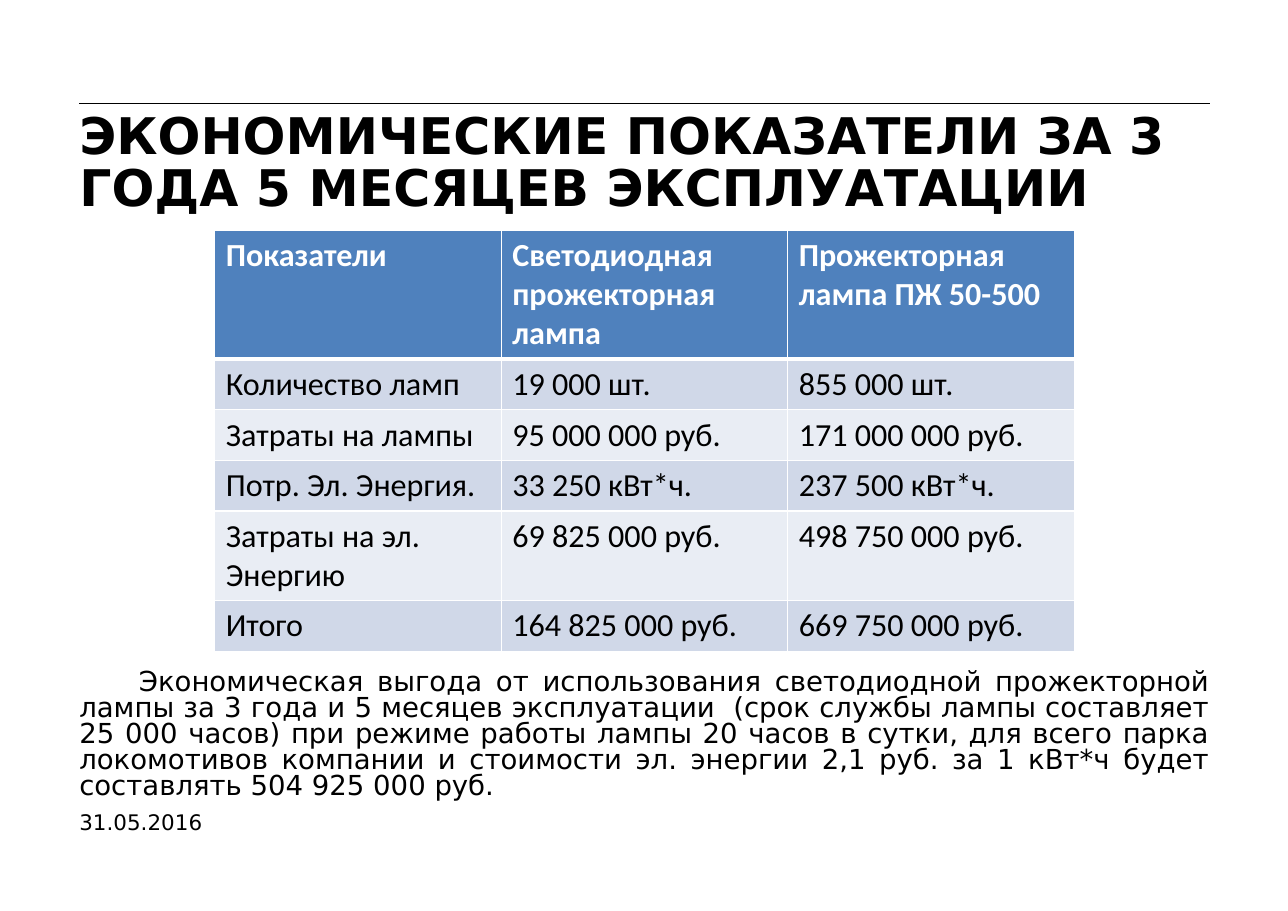
from lxml import etree
from pptx import Presentation
from pptx import util as u
from pptx.dml.color import RGBColor
from pptx.enum import shapes, text
from pptx.oxml.ns import qn

TITLE = "ЭКОНОМИЧЕСКИЕ ПОКАЗАТЕЛИ ЗА 3 ГОДА 5 МЕСЯЦЕВ ЭКСПЛУАТАЦИИ"
ROWS = [
    ("Показатели", "Светодиодная прожекторная лампа", "Прожекторная лампа ПЖ 50-500"),
    ("Количество ламп", "19 000 шт.", "855 000 шт."),
    ("Затраты на лампы", "95 000 000 руб.", "171 000 000 руб."),
    ("Потр. Эл. Энергия.", "33 250 кВт*ч.", "237 500 кВт*ч."),
    ("Затраты на эл. Энергию", "69 825 000 руб.", "498 750 000 руб."),
    ("Итого", "164 825 000 руб.", "669 750 000 руб."),
]
NOTE = (
    "Экономическая выгода от использования светодиодной прожекторной лампы "
    "за 3 года и 5 месяцев эксплуатации  (срок службы лампы составляет "
    "25 000 часов) при режиме работы лампы 20 часов в сутки, для всего парка "
    "локомотивов компании и стоимости эл. энергии 2,1 руб. за 1 кВт*ч будет "
    "составлять 504 925 000 руб."
)
DATE = "31.05.2016"

BLACK = RGBColor(0x00, 0x00, 0x00)
WHITE = RGBColor(0xFF, 0xFF, 0xFF)
BLUE = RGBColor(0x4F, 0x81, 0xBD)
BANDS = (RGBColor(0xE9, 0xED, 0xF4), RGBColor(0xD0, 0xD8, 0xE8))
SANS, BODY = "DejaVu Sans", "Calibri"

SCALE = 9144  # EMU in one px, 100 px to the inch
LEFT, WIDTH = 72, 1026
COL, ROW = 260, 41
HEAD_H, LINE_H, WRAP_H = 116, 46, 81


def px(n):
    return u.Emu(n * SCALE)


def style(par, size, color=BLACK, bold=False, name=SANS):
    font = par.font
    font.name, font.size, font.bold = name, u.Pt(size), bold
    font.color.rgb = color


def fill_box(box, words, size, bold=False, anchor=text.MSO_ANCHOR.TOP):
    """Put one paragraph in a box without insets and return it."""
    frame = box.text_frame
    frame.word_wrap = True
    frame.auto_size = text.MSO_AUTO_SIZE.NONE
    frame.vertical_anchor = anchor
    frame.margin_left = frame.margin_right = 0
    frame.margin_top = frame.margin_bottom = 0
    par = frame.paragraphs[0]
    par.text = words
    style(par, size, bold=bold)
    return par


def add_edges(cell, head):
    """Draw white cell borders, thicker below the header."""
    props = cell._tc.get_or_add_tcPr()
    for side in "LRTB":
        wide = 3 if head and side == "B" else 1
        line = etree.SubElement(props, qn(f"a:ln{side}"), w=str(u.Pt(wide)))
        solid = etree.SubElement(line, qn("a:solidFill"))
        etree.SubElement(solid, qn("a:srgbClr"), val=str(WHITE))


def add_table(slide):
    count, cols = len(ROWS), len(ROWS[0])
    frame = slide.shapes.add_table(
        count, cols, px(195), px(209), px(COL * cols), px(ROW * count))
    grid = frame.table
    for col in grid.columns:
        col.width = px(COL)
    for r, row in enumerate(ROWS):
        head = r == 0
        wraps = len(row[0]) > 20
        grid.rows[r].height = px(HEAD_H if head else WRAP_H if wraps else LINE_H)
        for c, words in enumerate(row):
            cell = grid.cell(r, c)
            cell.text = words
            style(cell.text_frame.paragraphs[0], 21,
                  WHITE if head else BLACK, head, BODY)
            add_edges(cell, head)
            cell.fill.solid()
            cell.fill.fore_color.rgb = BLUE if head else BANDS[r % 2]


def main():
    deck = Presentation()
    deck.slide_width, deck.slide_height = px(1169), px(827)
    slide = deck.slides.add_slide(deck.slide_layouts[5])

    rule = slide.shapes.add_connector(
        shapes.MSO_CONNECTOR.STRAIGHT, px(LEFT), px(94), px(LEFT + WIDTH), px(94))
    rule.line.color.rgb = BLACK
    rule.line.width = u.Pt(0.75)
    etree.SubElement(rule._element.spPr, qn("a:effectLst"))

    date = slide.shapes.add_textbox(px(LEFT), px(722), px(848), px(36))
    fill_box(date, DATE, 14, anchor=text.MSO_ANCHOR.BOTTOM)

    title = slide.shapes.title
    title.left, title.top, title.width, title.height = map(px, (LEFT, 102, WIDTH, 134))
    par = fill_box(title, TITLE, 33, bold=True)
    par.alignment = text.PP_ALIGN.LEFT
    par.line_spacing = u.Pt(34)

    note = slide.shapes.add_textbox(px(LEFT), px(609), px(WIDTH), px(150))
    par = fill_box(note, NOTE, 18)
    par.alignment = text.PP_ALIGN.JUSTIFY
    par.line_spacing = u.Pt(17)
    par._p.get_or_add_pPr().set("indent", str(px(54)))

    add_table(slide)
    deck.save("out.pptx")


if __name__ == "__main__":
    main()
